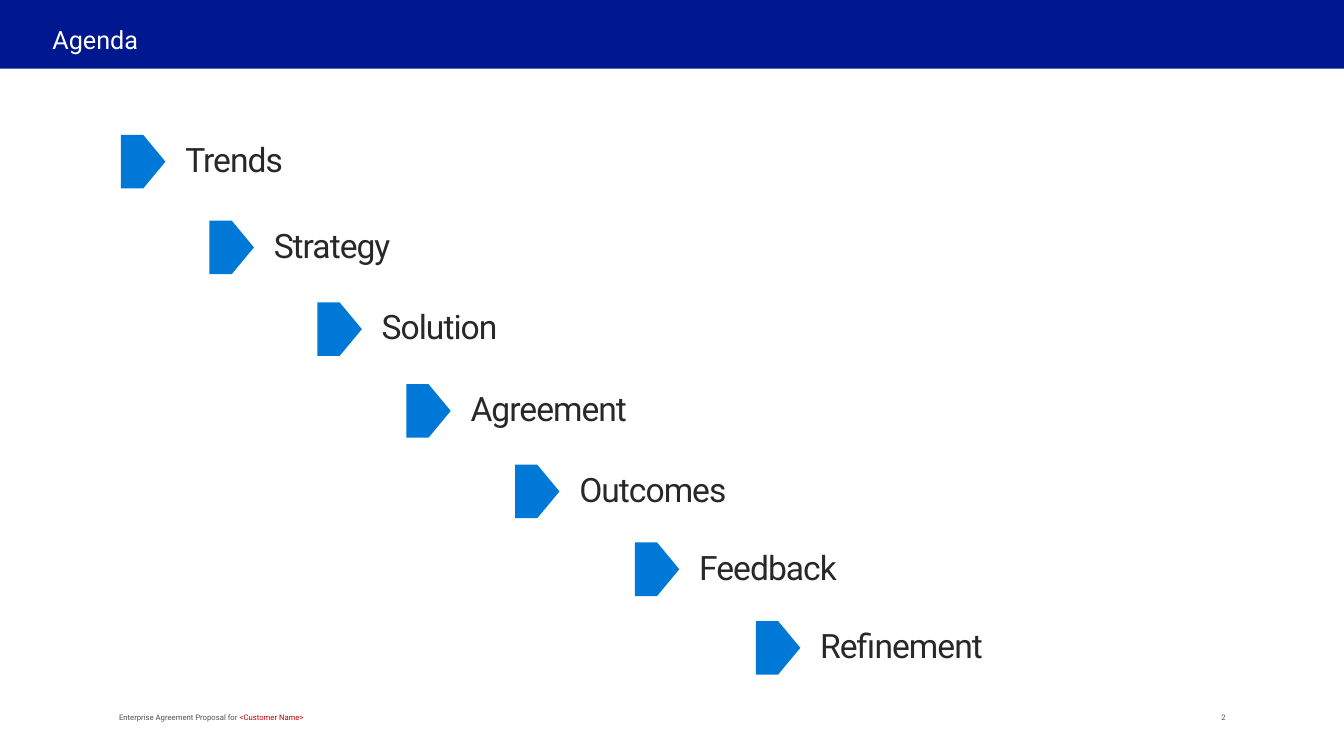
from dataclasses import dataclass

import pptx
import pptx.dml.color
import pptx.enum.shapes
import pptx.enum.text
import pptx.util

Cm = pptx.util.Cm
Pt = pptx.util.Pt
RGB = pptx.dml.color.RGBColor
Shape = pptx.enum.shapes.MSO_SHAPE
Anchor = pptx.enum.text.MSO_ANCHOR
Align = pptx.enum.text.PP_ALIGN


@dataclass(frozen=True)
class Theme:
    font: str = "Roboto"
    bar: RGB = RGB(0x00, 0x18, 0x8F)
    marker: RGB = RGB(0x00, 0x78, 0xD7)
    title: RGB = RGB(0xFF, 0xFF, 0xFF)
    label: RGB = RGB(0x28, 0x28, 0x28)
    footer: RGB = RGB(0x50, 0x50, 0x50)
    customer: RGB = RGB(0xC0, 0x00, 0x00)
    title_size: float = 18
    label_size: float = 24
    footer_size: float = 5.5


@dataclass(frozen=True)
class AgendaItem:
    """One agenda step; left and top of its marker in centimetres."""
    text: str
    left: float
    top: float


THEME = Theme()
ITEMS = [
    AgendaItem("Trends", 3.05, 3.4),
    AgendaItem("Strategy", 5.28, 5.56),
    AgendaItem("Solution", 8.0, 7.62),
    AgendaItem("Agreement", 10.24, 9.68),
    AgendaItem("Outcomes", 12.98, 11.71),
    AgendaItem("Feedback", 16.0, 13.67),
    AgendaItem("Refinement", 19.05, 15.65),
]


def format_run(r, size: float, color: RGB) -> None:
    r.font.name = THEME.font
    r.font.size = Pt(size)
    r.font.color.rgb = color


def set_frame(tf, inset_x: float, inset_y: float, anchor, wrap: bool) -> None:
    tf.margin_left = tf.margin_right = Cm(inset_x)
    tf.margin_top = tf.margin_bottom = Cm(inset_y)
    tf.vertical_anchor = anchor
    tf.word_wrap = wrap
    tf.auto_size = pptx.enum.text.MSO_AUTO_SIZE.NONE


def add_filled(shapes, kind, left: float, top: float, width: float,
               height: float, color: RGB):
    sp = shapes.add_shape(kind, Cm(left), Cm(top), Cm(width), Cm(height))
    sp.shadow.inherit = False
    sp.fill.solid()
    sp.fill.fore_color.rgb = color
    sp.line.fill.background()
    return sp


def add_title(s, text: str) -> None:
    """Fill the title placeholder and put the blue bar behind it."""
    bar = add_filled(s.shapes, Shape.RECTANGLE, 0, 0, 33.87, 1.73, THEME.bar)
    sp = s.shapes.title
    sp._element.addprevious(bar._element)
    sp.left, sp.top, sp.width, sp.height = Cm(1.32), Cm(0.61), Cm(27.89), Cm(0.76)
    tf = sp.text_frame
    tf.text = text
    set_frame(tf, 0, 0, Anchor.TOP, True)
    p = tf.paragraphs[0]
    p.alignment = Align.LEFT
    format_run(p.runs[0], THEME.title_size, THEME.title)


def add_item(s, item: AgendaItem) -> None:
    shapes = s.shapes.add_group_shape().shapes
    add_filled(shapes, Shape.PENTAGON, item.left, item.top, 1.12, 1.35,
               THEME.marker)
    label = shapes.add_textbox(Cm(item.left + 1.11), Cm(item.top - 0.31),
                               Cm(3.86), Cm(1.96))
    tf = label.text_frame
    tf.text = item.text
    set_frame(tf, 0.51, 0.41, Anchor.TOP, False)
    p = tf.paragraphs[0]
    p.space_after = Pt(6)
    r = p.runs[0]
    format_run(r, THEME.label_size, THEME.label)
    r.font._element.set("spc", "-70")


def add_footer(s, left: float, width: float, align,
               parts: list[tuple[str, RGB]]) -> None:
    sp = s.shapes.add_textbox(Cm(left), Cm(17.96), Cm(width), Cm(0.23))
    set_frame(sp.text_frame, 0, 0, Anchor.BOTTOM, True)
    p = sp.text_frame.paragraphs[0]
    p.alignment = align
    for text, color in parts:
        r = p.add_run()
        r.text = text
        format_run(r, THEME.footer_size, color)


def main() -> None:
    prs = pptx.Presentation()
    prs.slide_width, prs.slide_height = Cm(33.87), Cm(19.05)
    s = prs.slides.add_slide(prs.slide_layouts.get_by_name("Title Only"))
    add_title(s, "Agenda")
    for item in ITEMS:
        add_item(s, item)
    add_footer(s, 3.0, 18.26, Align.LEFT,
               [("Enterprise Agreement Proposal for ", THEME.footer),
                ("<Customer Name>", THEME.customer)])
    add_footer(s, 22.25, 8.64, Align.RIGHT, [("2", THEME.footer)])
    prs.save("out.pptx")


if __name__ == "__main__":
    main()
